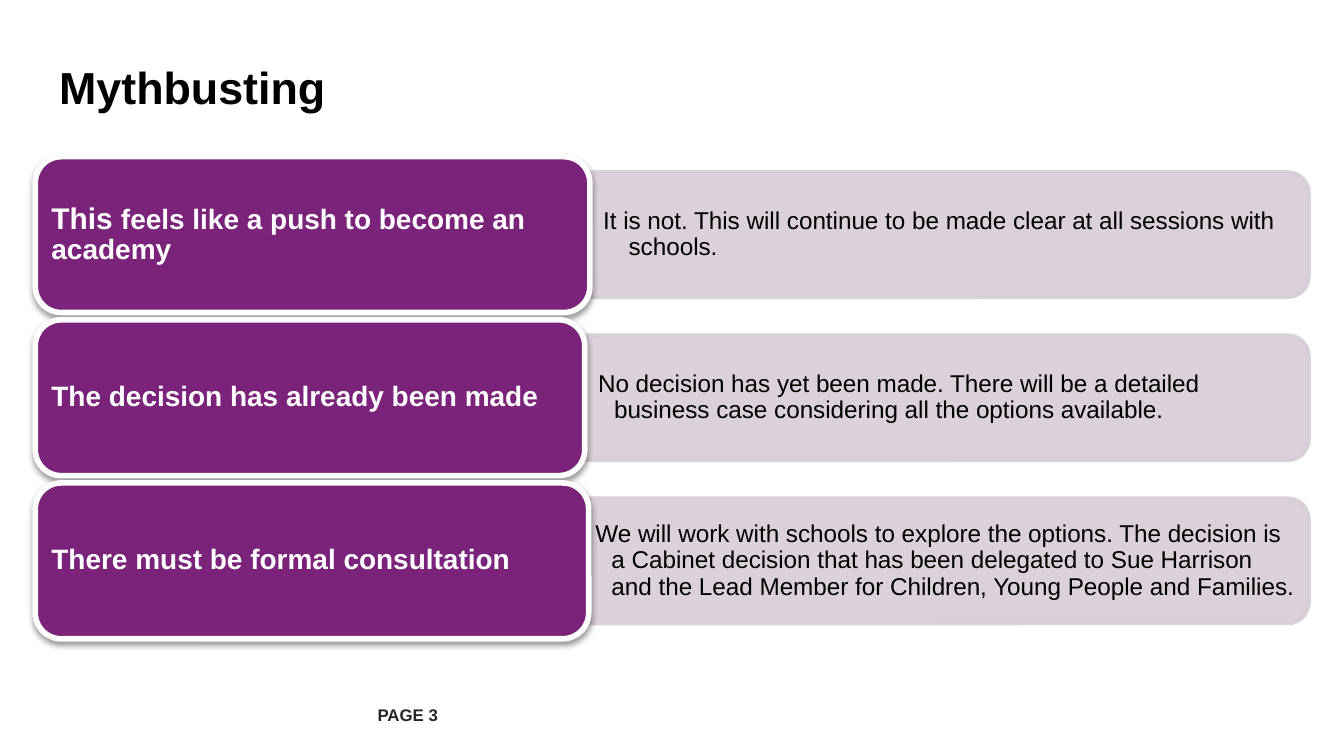
"""Build the Mythbusting slide: three myth cards, each with its answer panel."""
from lxml import etree
from pptx import Presentation
from pptx.dml.color import RGBColor
from pptx.enum.shapes import MSO_SHAPE
from pptx.enum.text import MSO_ANCHOR, PP_ALIGN
from pptx.oxml.ns import qn
from pptx.util import Pt

CARD_SHAPE = MSO_SHAPE.ROUNDED_RECTANGLE
PANEL_SHAPE = MSO_SHAPE.ROUND_2_SAME_RECTANGLE
MIDDLE = MSO_ANCHOR.MIDDLE
LEFT = PP_ALIGN.LEFT

PURPLE = RGBColor(0x7B, 0x23, 0x7A)
LILAC = RGBColor(0xD7, 0xCD, 0xD7)
WHITE = RGBColor(0xFF, 0xFF, 0xFF)
BLACK = RGBColor(0, 0, 0)
GREY = RGBColor(0x26, 0x26, 0x26)

TITLE = "Mythbusting"
PAGE_LABEL = "PAGE 3"
ROWS = [
    {"myth": [("This ", 16), ("feels like a push to become an academy", 15)],
     "answer": "It is not. This will continue to be made clear at all sessions with schools.",
     "split": 316, "indent": 13.7, "insets": (7.2, 3.6)},
    {"myth": [("The decision has already been made", 15)],
     "answer": "No decision has yet been made. There will be a detailed business case "
               "considering all the options available.",
     "split": 313.3, "indent": 8.6, "insets": (7.2, 3.6)},
    {"myth": [("There must be formal consultation", 15)],
     "answer": "We will work with schools to explore the options. The decision is a Cabinet "
               "decision that has been delegated to Sue Harrison and the Lead Member for "
               "Children, Young People and Families.",
     "split": 315.4, "indent": 8.6, "insets": (3.6, 2)},
]

CARD_LEFT, CARD_HEIGHT = 18.9, 83.5
PANEL_RIGHT, PANEL_HEIGHT = 701.2, 67
ANSWER_RIGHT, ANSWER_HEIGHT = 697.8, 60
FIRST_CENTRE, ROW_PITCH = 125.7, 87.4


def write_text(shape, runs, color, bold=False, insets=(6.5, 3), indent=0, spacing=None):
    frame = shape.text_frame
    frame.word_wrap = True
    frame.vertical_anchor = MIDDLE
    frame.margin_left = frame.margin_right = Pt(insets[0])
    frame.margin_top = frame.margin_bottom = Pt(insets[1])
    paragraph = frame.paragraphs[0]
    paragraph.alignment = LEFT
    paragraph.line_spacing = spacing
    if indent:
        properties = paragraph._p.get_or_add_pPr()
        properties.set("marL", str(Pt(indent)))
        properties.set("indent", str(-Pt(indent)))
    for text, size in runs:
        run = paragraph.add_run()
        run.text = text
        run.font.name = "Arial"
        run.font.size = Pt(size)
        run.font.bold = bold
        run.font.color.rgb = color


def add_textbox(slide, left, top, width, height, runs, color, **style):
    textbox = slide.shapes.add_textbox(Pt(left), Pt(top), Pt(width), Pt(height))
    write_text(textbox, runs, color, **style)


def add_block(slide, kind, left, centre, width, height, fill, line, line_width):
    shape = slide.shapes.add_shape(
        kind, Pt(left), Pt(centre - height / 2), Pt(width), Pt(height))
    shape.shadow.inherit = False
    shape.fill.solid()
    shape.fill.fore_color.rgb = fill
    shape.line.color.rgb = line
    shape.line.width = Pt(line_width)
    return shape


def add_panel(slide, left, centre):
    length = PANEL_RIGHT - left
    unrotated_left = (left + PANEL_RIGHT - PANEL_HEIGHT) / 2
    panel = add_block(slide, PANEL_SHAPE, unrotated_left, centre,
                      PANEL_HEIGHT, length, LILAC, LILAC, 2)
    panel.rotation = 90
    for color in panel._element.spPr.iter(qn("a:srgbClr")):
        etree.SubElement(color, qn("a:alpha"), val="90000")


def add_card(slide, right, centre, runs):
    card = add_block(slide, CARD_SHAPE, CARD_LEFT, centre,
                     right - CARD_LEFT, CARD_HEIGHT, PURPLE, WHITE, 3)
    effects = card._element.spPr.find(qn("a:effectLst"))
    shadow = etree.SubElement(effects, qn("a:outerShdw"), blurRad=str(Pt(3.1)),
                              dist=str(Pt(1.6)), dir="5400000", rotWithShape="0")
    color = etree.SubElement(shadow, qn("a:srgbClr"), val=str(BLACK))
    etree.SubElement(color, qn("a:alpha"), val="38000")
    write_text(card, runs, WHITE, bold=True, insets=(4.6, 2.3), spacing=0.9)


def main():
    presentation = Presentation()
    presentation.slide_width, presentation.slide_height = Pt(720), Pt(405)
    slide = presentation.slides.add_slide(presentation.slide_layouts[6])

    add_textbox(slide, 195.8, 372.2, 62.6, 21.6, [(PAGE_LABEL, 9)], GREY, bold=True)
    for index, row in enumerate(ROWS):
        centre = FIRST_CENTRE + index * ROW_PITCH
        split = row["split"]
        add_panel(slide, split, centre)
        add_textbox(slide, split, centre - ANSWER_HEIGHT / 2, ANSWER_RIGHT - split,
                    ANSWER_HEIGHT, [(row["answer"], 13)], BLACK,
                    insets=row["insets"], indent=row["indent"], spacing=0.9)
        add_card(slide, split, centre, row["myth"])
    add_textbox(slide, 25.2, 16.8, 648, 59, [(TITLE, 24)], BLACK, bold=True)

    presentation.save("out.pptx")


if __name__ == "__main__":
    main()
